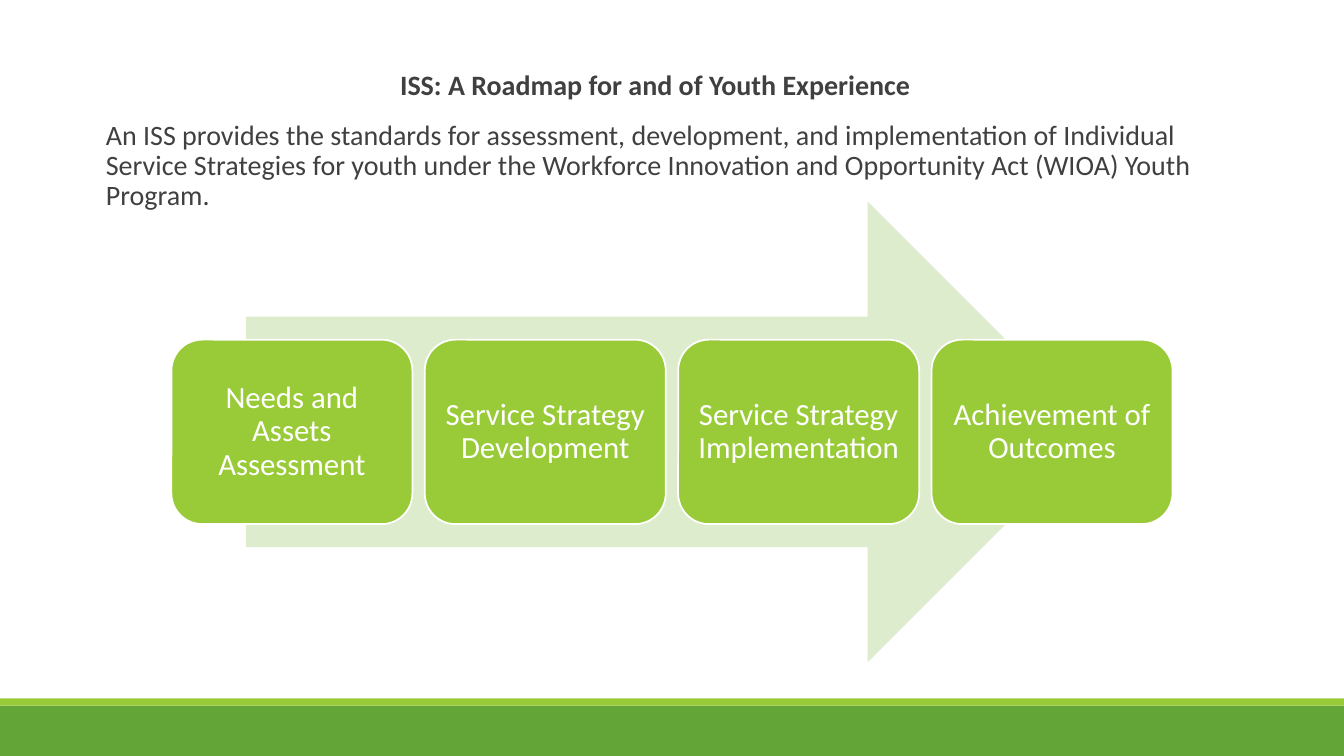
"""Build the ISS roadmap slide."""
from dataclasses import dataclass

import pptx
import pptx.dml.color
import pptx.enum.shapes
import pptx.enum.text
import pptx.util

Inches = pptx.util.Inches
Pt = pptx.util.Pt
SHAPE = pptx.enum.shapes.MSO_SHAPE
ALIGN = pptx.enum.text.PP_ALIGN
ANCHOR = pptx.enum.text.MSO_ANCHOR

LIME = "99CB38"
WHITE = "FFFFFF"
STEP_LEFT, STEP_PITCH = 1.7, 2.513


@dataclass(frozen=True)
class Block:
    kind: int
    left: float
    top: float
    width: float
    height: float
    fill: str


@dataclass(frozen=True)
class Para:
    text: str
    align: int
    bold: bool


BARS = [
    Block(SHAPE.RECTANGLE, 0, 7, 13.33, 0.5, "63A537"),
    Block(SHAPE.RECTANGLE, 0, 6.93, 13.33, 0.07, LIME),
]
ARROW = Block(SHAPE.RIGHT_ARROW, 2.44, 2, 8.45, 4.57, "DEECCE")
INTRO = [
    Para("ISS: A Roadmap for and of Youth Experience", ALIGN.CENTER, True),
    Para("An ISS provides the standards for assessment, development, and "
         "implementation of Individual Service Strategies for youth under the "
         "Workforce Innovation and Opportunity Act (WIOA) Youth Program.",
         ALIGN.LEFT, False),
]
STEPS = [
    "Needs and Assets Assessment",
    "Service Strategy Development",
    "Service Strategy Implementation",
    "Achievement of Outcomes",
]


def rgb(color: str) -> pptx.dml.color.RGBColor:
    return pptx.dml.color.RGBColor.from_string(color)


def set_insets(tf, x: float, y: float) -> None:
    tf.word_wrap = True
    tf.margin_left = tf.margin_right = Inches(x)
    tf.margin_top = tf.margin_bottom = Inches(y)


def add_run(p, text: str, size: float, color: str, bold: bool = False) -> None:
    p.line_spacing = 0.9
    r = p.add_run()
    r.text = text
    r.font.name = "Calibri"
    r.font.size = Pt(size)
    r.font.bold = bold
    r.font.color.rgb = rgb(color)


def add_block(s, block: Block):
    sp = s.shapes.add_shape(block.kind, Inches(block.left), Inches(block.top),
                            Inches(block.width), Inches(block.height))
    sp.shadow.inherit = False
    sp.fill.solid()
    sp.fill.fore_color.rgb = rgb(block.fill)
    sp.line.fill.background()
    return sp


def add_intro(s, paras: list[Para]) -> None:
    tf = s.shapes.add_textbox(Inches(0.95), Inches(0.66), Inches(11), Inches(4.4)).text_frame
    set_insets(tf, 0, 0.05)
    for i, para in enumerate(paras):
        p = tf.add_paragraph() if i else tf.paragraphs[0]
        p.alignment = para.align
        p.space_before = Pt(12)
        p.space_after = Pt(2)
        add_run(p, para.text, 20, "404040", para.bold)
        p._p.get_or_add_pPr().set("marL", str(Inches(0.1)))


def add_step(s, index: int, text: str) -> None:
    left = STEP_LEFT + index * STEP_PITCH
    sp = add_block(s, Block(SHAPE.ROUNDED_RECTANGLE, left, 3.37, 2.39, 1.83, LIME))
    sp.line.color.rgb = rgb(WHITE)
    sp.line.width = Pt(1.25)
    tf = sp.text_frame
    set_insets(tf, 0.09, 0.09)
    tf.vertical_anchor = ANCHOR.MIDDLE
    p = tf.paragraphs[0]
    p.alignment = ALIGN.CENTER
    add_run(p, text, 22, WHITE)


def main() -> None:
    prs = pptx.Presentation()
    prs.slide_width = Inches(13.33)
    prs.slide_height = Inches(7.5)
    s = prs.slides.add_slide(prs.slide_layouts[6])
    for bar in BARS:
        add_block(s, bar)
    add_intro(s, INTRO)
    add_block(s, ARROW)
    for i, text in enumerate(STEPS):
        add_step(s, i, text)
    prs.save("out.pptx")


if __name__ == "__main__":
    main()
